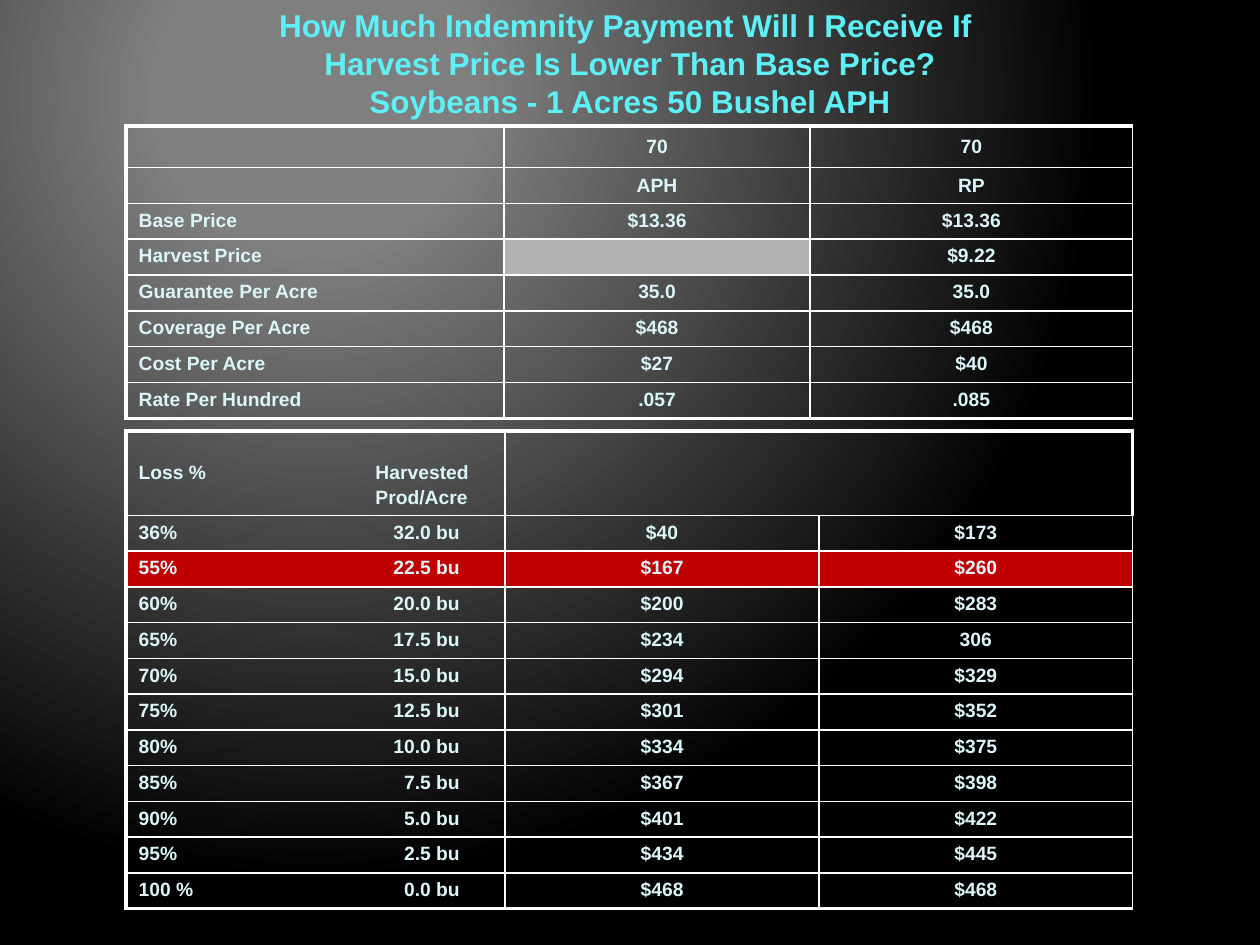
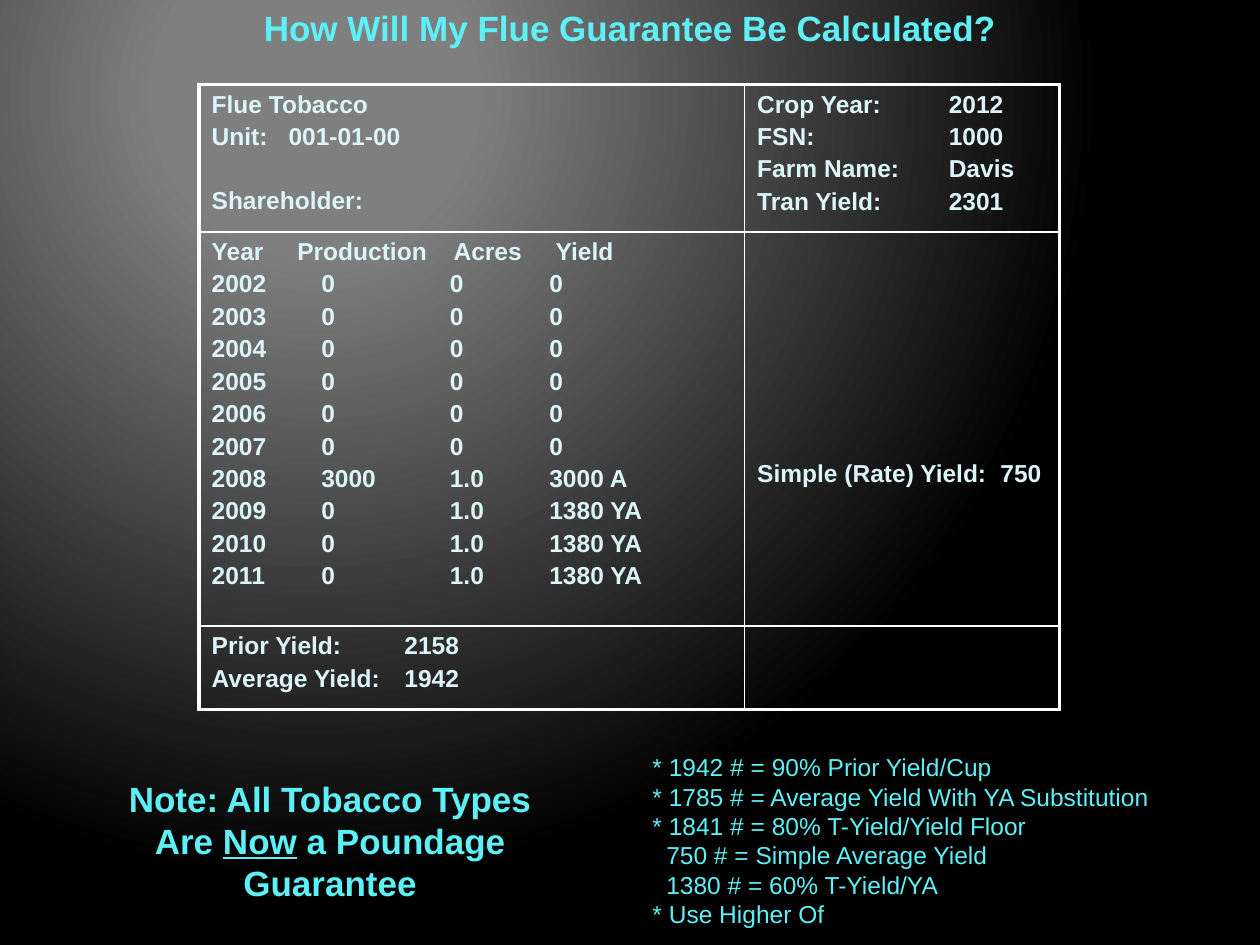
import pptx
import pptx.util
import pptx.dml.color
import pptx.enum.text
import pptx.oxml.ns
from lxml import etree

Inches = pptx.util.Inches
Pt = pptx.util.Pt
RGBColor = pptx.dml.color.RGBColor
PP_ALIGN = pptx.enum.text.PP_ALIGN
MSO_ANCHOR = pptx.enum.text.MSO_ANCHOR
qn = pptx.oxml.ns.qn

FONT = "Arial"
CYAN = RGBColor(0x5E, 0xF0, 0xF7)
PALE = RGBColor(0xDB, 0xF5, 0xF9)
WHITE = RGBColor(0xFF, 0xFF, 0xFF)
GREY = RGBColor(0x7F, 0x7F, 0x7F)
LIGHT_GREY = RGBColor(0xB2, 0xB2, 0xB2)
BLACK = RGBColor(0x00, 0x00, 0x00)
RED = RGBColor(0xC0, 0x00, 0x00)

THICK = Pt(2.25)
THIN = Pt(1)

POLICY_ROWS = [
    ["", "70", "70"],
    ["", "APH", "RP"],
    ["Base Price", "$13.36", "$13.36"],
    ["Harvest Price", "", "$9.22"],
    ["Guarantee Per Acre", "35.0", "35.0"],
    ["Coverage Per Acre", "$468", "$468"],
    ["Cost Per Acre", "$27", "$40"],
    ["Rate Per Hundred", ".057", ".085"],
]
LOSS_ROWS = [
    ["Loss %\tHarvested\n\tProd/Acre", "", ""],
    ["36%\t32.0 bu", "$40", "$173"],
    ["55%\t22.5 bu", "$167", "$260"],
    ["60%\t20.0 bu", "$200", "$283"],
    ["65%\t17.5 bu", "$234", "306"],
    ["70%\t15.0 bu", "$294", "$329"],
    ["75%\t12.5 bu", "$301", "$352"],
    ["80%\t10.0 bu", "$334", "$375"],
    ["85%\t7.5 bu", "$367", "$398"],
    ["90%\t5.0 bu", "$401", "$422"],
    ["95%\t2.5 bu", "$434", "$445"],
    ["100 %\t0.0 bu", "$468", "$468"],
]
YIELD_HISTORY = ["Year\tProduction\tAcres\tYield"]
YIELD_HISTORY += [f"{year}\t0\t0\t0" for year in range(2002, 2008)]
YIELD_HISTORY += ["2008\t3000\t1.0\t3000 A"]
YIELD_HISTORY += [f"{year}\t0\t1.0\t1380 YA" for year in range(2009, 2012)]
GUARANTEE_ROWS = [
    ["Flue Tobacco\nUnit:\t001-01-00\nShareholder:",
     "Crop Year:\t2012\nFSN:\t1000\nFarm Name:\tDavis\nTran Yield:\t2301"],
    ["\n".join(YIELD_HISTORY), "Simple (Rate) Yield:\t750"],
    ["Prior Yield:\t2158\nAverage Yield:\t1942", ""],
]
YIELD_NOTES = [
    "* 1942 # = 90% Prior Yield/Cup",
    "* 1785 # = Average Yield With YA Substitution",
    "* 1841 # = 80% T-Yield/Yield Floor",
    "750 # = Simple Average Yield",
    "1380 # = 60% T-Yield/YA",
    "* Use Higher Of",
]


def add_slide(presentation):
    """Add a blank slide with the round grey-to-black background."""
    slide = presentation.slides.add_slide(presentation.slide_layouts[6])
    fill = slide.background.fill
    fill.gradient()
    for stop, position, color in zip(fill.gradient_stops, (0.2, 1), (GREY, BLACK)):
        stop.position = position
        stop.color.rgb = color
    gradient = slide.element.find(".//" + qn("a:gradFill"))
    circle = etree.Element(qn("a:path"), path="circle")
    etree.SubElement(circle, qn("a:fillToRect"),
                     l="50000", t="20000", r="100000", b="100000")
    gradient.replace(gradient.find(qn("a:lin")), circle)
    return slide


def format_paragraph(paragraph, size, color, bold, alignment):
    paragraph.alignment = alignment
    for run in paragraph.runs:
        run.font.name = FONT
        run.font.size = Pt(size)
        run.font.bold = bold
        run.font.color.rgb = color
    if not paragraph.runs:
        etree.SubElement(paragraph._p, qn("a:endParaRPr"), sz=str(size * 100))


def add_text(slide, box, text, size, bold=True, alignment=PP_ALIGN.CENTER,
             anchor=MSO_ANCHOR.TOP):
    text_frame = slide.shapes.add_textbox(*map(Inches, box)).text_frame
    text_frame.word_wrap = True
    text_frame.vertical_anchor = anchor
    text_frame.text = text
    for paragraph in text_frame.paragraphs:
        format_paragraph(paragraph, size, CYAN, bold, alignment)
    return text_frame


def set_borders(cell, widths):
    """Draw white borders; widths are left, right, top, bottom."""
    properties = cell._tc.get_or_add_tcPr()
    for tag, width in zip(("a:lnL", "a:lnR", "a:lnT", "a:lnB"), widths):
        line = etree.SubElement(properties, qn(tag), w=str(int(width)))
        solid = etree.SubElement(line, qn("a:solidFill"))
        etree.SubElement(solid, qn("a:srgbClr"), val=str(WHITE))


def set_space_before(paragraph):
    """Leave a fifth of a line above the paragraph."""
    space = etree.Element(qn("a:spcBef"))
    etree.SubElement(space, qn("a:spcPct"), val="20000")
    paragraph._p.get_or_add_pPr().insert(0, space)


def set_tabs(paragraphs, *positions, alignment="l"):
    for paragraph in paragraphs:
        tabs = etree.SubElement(paragraph._p.get_or_add_pPr(), qn("a:tabLst"))
        for position in positions:
            etree.SubElement(tabs, qn("a:tab"), pos=str(Inches(position)), algn=alignment)


def add_table(slide, left, top, column_widths, row_heights, rows, size,
              value_alignment, thick_right_rows=(), merges=()):
    """Add a see-through table with a thick frame; merges are (row, first, last)."""
    table = slide.shapes.add_table(
        len(rows), len(column_widths), Inches(left), Inches(top),
        Inches(sum(column_widths)), Inches(sum(row_heights))).table
    table.first_row = table.horz_banding = False
    for column, width in zip(table.columns, column_widths):
        column.width = Inches(width)
    for row, height in zip(table.rows, row_heights):
        row.height = Inches(height)
    for row, first, last in merges:
        table.cell(row, first).merge(table.cell(row, last))

    last_row, last_column = len(rows) - 1, len(column_widths) - 1
    for row_index, texts in enumerate(rows):
        for column_index, text in enumerate(texts):
            cell = table.cell(row_index, column_index)
            right_column = column_index
            if cell.is_merge_origin:
                right_column += cell.span_width - 1
            thick_right = right_column == last_column and row_index in thick_right_rows
            edges = (column_index == 0, thick_right, row_index == 0, row_index == last_row)
            set_borders(cell, [THICK if edge else THIN for edge in edges])
            cell.fill.background()
            cell.text_frame.text = text
            alignment = value_alignment if column_index else PP_ALIGN.LEFT
            for paragraph in cell.text_frame.paragraphs:
                format_paragraph(paragraph, size, PALE, True, alignment)
                set_space_before(paragraph)
    return table


def fill_cell(cell, color):
    cell.fill.solid()
    cell.fill.fore_color.rgb = color


def build_indemnity_slide(presentation):
    slide = add_slide(presentation)
    add_text(slide, (0, 0.25, 10, 0.5),
             "How Much Indemnity Payment Will I Receive If \n"
             "Harvest Price Is Lower Than Base Price?\n"
             "Soybeans - 1 Acres 50 Bushel APH", 18, anchor=MSO_ANCHOR.MIDDLE)

    policies = add_table(slide, 1, 1, (3, 2.43, 2.56), [0.33] + [1.99 / 7] * 7,
                         POLICY_ROWS, 11, PP_ALIGN.CENTER)
    for row in (0, 1):
        for column in (1, 2):
            policies.cell(row, column).vertical_anchor = MSO_ANCHOR.MIDDLE
    fill_cell(policies.cell(3, 1), LIGHT_GREY)

    losses = add_table(slide, 1, 3.42, (3.01, 2.49, 2.49), [0.67] + [3.03 / 11] * 11,
                       LOSS_ROWS, 11, PP_ALIGN.CENTER,
                       thick_right_rows=(0,), merges=[(0, 1, 2)])
    header = losses.cell(0, 0)
    header.vertical_anchor = MSO_ANCHOR.BOTTOM
    set_tabs(header.text_frame.paragraphs, 1.88)
    for row in range(1, len(LOSS_ROWS)):
        set_tabs(losses.cell(row, 0).text_frame.paragraphs, 2.55, alignment="r")
    for column in range(3):
        fill_cell(losses.cell(2, column), RED)


def build_guarantee_slide(presentation):
    slide = add_slide(presentation)
    table = add_table(slide, 1.58, 0.67, (4.33, 2.5), (1.17, 3.13, 0.66),
                      GUARANTEE_ROWS, 14, PP_ALIGN.LEFT, thick_right_rows=(0, 1, 2))
    unit = table.cell(0, 0).text_frame.paragraphs
    set_tabs(unit[1:2], 0.61)
    unit[2].space_before = Pt(21)
    set_tabs(table.cell(0, 1).text_frame.paragraphs, 1.52)
    history = table.cell(1, 0).text_frame.paragraphs
    set_tabs(history[:1], 0.68, 1.92, 2.73)
    set_tabs(history[1:], 0.87, 1.89, 2.68)
    simple_yield = table.cell(1, 1)
    simple_yield.margin_top = Inches(1.81)
    set_tabs(simple_yield.text_frame.paragraphs, 1.93)
    set_tabs(table.cell(2, 0).text_frame.paragraphs, 1.53)

    notes = add_text(slide, (5.08, 5.92, 4.67, 1.51), "\n".join(YIELD_NOTES), 14,
                     bold=False, alignment=PP_ALIGN.LEFT)
    for paragraph in notes.paragraphs:
        if not paragraph.text.startswith("*"):
            paragraph._p.get_or_add_pPr().set("marL", str(Inches(0.11)))

    add_text(slide, (0, 0, 10, 0.43), "How Will My Flue Guarantee Be Calculated?", 20)

    poundage = add_text(slide, (0.83, 6.12, 3.58, 1.11),
                        "Note: All Tobacco Types Are ", 20).paragraphs[0]
    for text in ("Now", " a Poundage Guarantee"):
        run = poundage.add_run()
        run.text = text
        run.font.underline = text == "Now"
    format_paragraph(poundage, 20, CYAN, True, PP_ALIGN.CENTER)


def main():
    presentation = pptx.Presentation()
    presentation.slide_width = Inches(10)
    presentation.slide_height = Inches(7.5)
    build_indemnity_slide(presentation)
    build_guarantee_slide(presentation)
    presentation.save("out.pptx")


if __name__ == "__main__":
    main()
